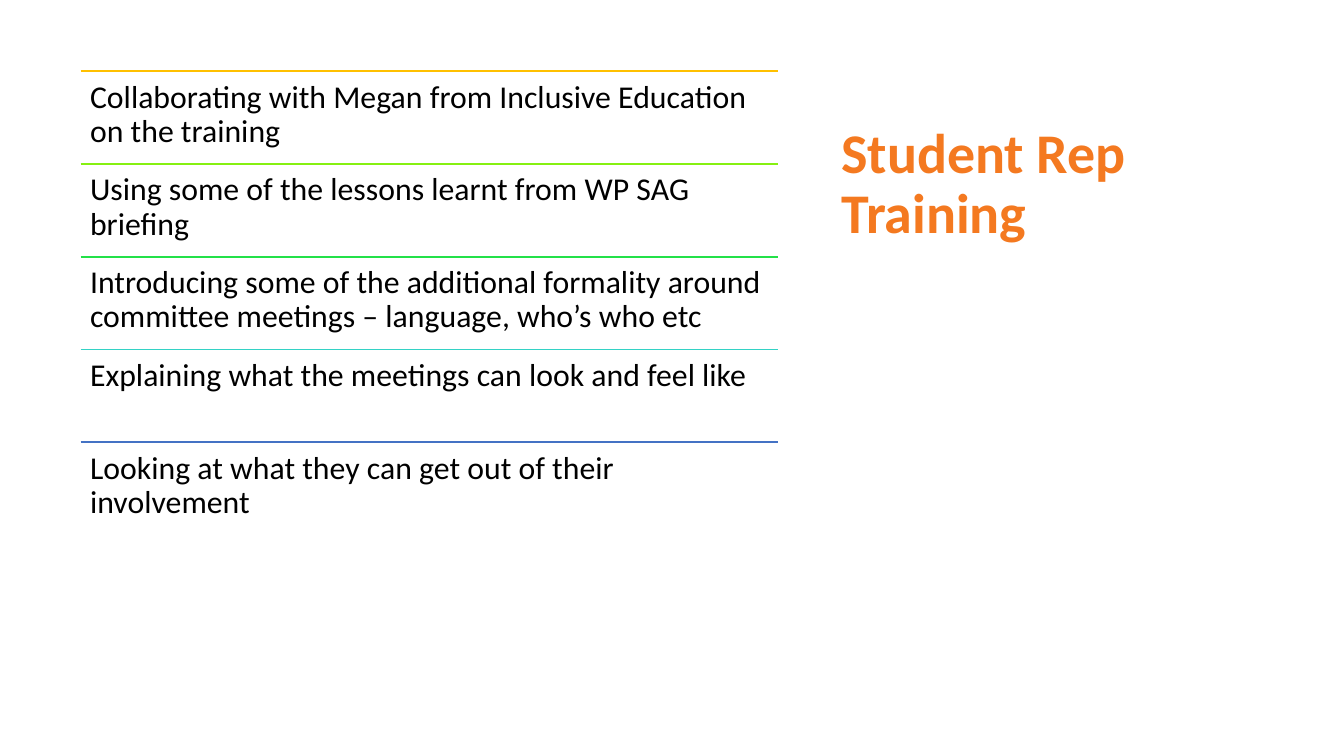
from dataclasses import dataclass
from lxml.etree import SubElement
from pptx import Presentation
from pptx.dml.color import RGBColor
from pptx.enum.shapes import MSO_CONNECTOR
from pptx.enum.text import MSO_ANCHOR, MSO_AUTO_SIZE, PP_ALIGN
from pptx.oxml.ns import qn
from pptx.util import Inches, Pt


@dataclass(frozen=True)
class Theme:
    font: str = "Calibri"
    head: str = "F47920"
    ink: str = "000000"
    rules: tuple = ("FFC000", "86F011", "23E148", "33D2C5", "4472C4")
    big: int = 30
    small: int = 17
    line: int = 1


theme = Theme()


def write(frame, text, size, color, bold=False, pad=None):
    frame.word_wrap = True
    frame.auto_size = MSO_AUTO_SIZE.NONE
    frame.vertical_anchor = MSO_ANCHOR.TOP
    if pad is not None:
        frame.margin_left = frame.margin_right = Inches(pad)
        frame.margin_top = frame.margin_bottom = Inches(pad)
    para = frame.paragraphs[0]
    para.alignment = PP_ALIGN.LEFT
    para.line_spacing = 0.9
    run = para.add_run()
    run.text = text
    run.font.name = theme.font
    run.font.size = Pt(size)
    run.font.bold = bold
    run.font.color.rgb = RGBColor.from_string(color)


deck = Presentation()
deck.slide_width = Inches(10)
deck.slide_height = Inches(10 * 9 / 16)
slide = deck.slides.add_slide(deck.slide_layouts[5])

title = slide.shapes.title
title.left, title.top = Inches(6.16), Inches(0.88)
title.width, title.height = Inches(3.24), Inches(2.74)
write(title.text_frame, "Student Rep Training", theme.big, theme.head, bold=True)

points = (
    "Collaborating with Megan from Inclusive Education on the training",
    "Using some of the lessons learnt from WP SAG briefing",
    "Introducing some of the additional formality around committee meetings – language, who’s who etc",
    "Explaining what the meetings can look and feel like",
    "Looking at what they can get out of their involvement",
)
left, width, step = Inches(0.6), Inches(5.19), Inches(0.69)

for row, (point, color) in enumerate(zip(points, theme.rules)):
    top = Inches(0.53) + row * step
    rule = slide.shapes.add_connector(
        MSO_CONNECTOR.STRAIGHT, left, top, left + width, top
    )
    rule.line.color.rgb = RGBColor.from_string(color)
    rule.line.width = Pt(theme.line)
    SubElement(rule.element.spPr, qn("a:effectLst"))
    box = slide.shapes.add_textbox(left, top, width, step)
    write(box.text_frame, point, theme.small, theme.ink, pad=0.07)

deck.save("out.pptx")
